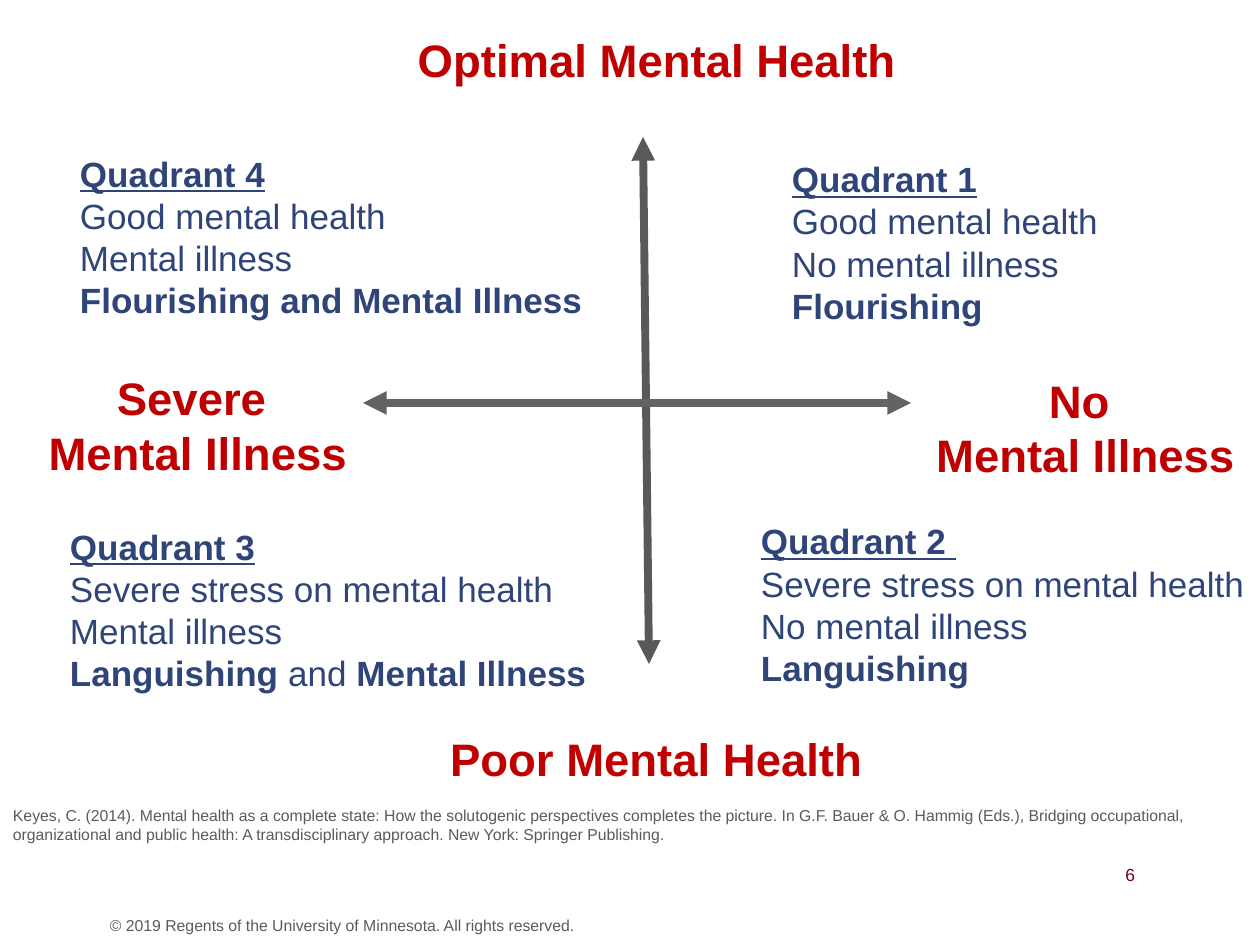
import pptx
import pptx.dml.color
import pptx.enum.shapes
import pptx.enum.text
import pptx.oxml.ns
import pptx.util
from lxml import etree

EMU_PER_PX = 914400 / 126
FONT = "Arial"
COLORS = {
    "axis_label": "C00000",
    "quadrant": "2F4478",
    "vertical_axis": "5A5858",
    "horizontal_axis": "646262",
    "note": "5C5A5A",
    "page_number": "7A0019",
}
ALIGN = pptx.enum.text.PP_ALIGN
WIDE_INSETS = (13, 6)
NARROW_INSETS = (9, 5)


def px(value):
    return pptx.util.Emu(round(value * EMU_PER_PX))


def rgb(name):
    return pptx.dml.color.RGBColor.from_string(COLORS[name])


def format_run(run, size, color, bold=False, underline=False):
    run.font.name = FONT
    run.font.size = pptx.util.Pt(size)
    run.font.color.rgb = rgb(color)
    run.font.bold = bold
    run.font.underline = underline


def add_text_frame(slide, box, insets=WIDE_INSETS):
    text_frame = slide.shapes.add_textbox(*map(px, box)).text_frame
    text_frame.word_wrap = True
    horizontal, vertical = map(px, insets)
    text_frame.margin_left = text_frame.margin_right = horizontal
    text_frame.margin_top = text_frame.margin_bottom = vertical
    return text_frame


def add_text(slide, box, text, size, color, align=ALIGN.LEFT, bold=False):
    text_frame = add_text_frame(slide, box)
    text_frame.text = text
    for paragraph in text_frame.paragraphs:
        paragraph.alignment = align
        for run in paragraph.runs:
            format_run(run, size, color, bold)


def add_axis_label(slide, box, text):
    add_text(slide, box, text, 26, "axis_label", ALIGN.CENTER, bold=True)


def add_quadrant(slide, box, heading, descriptions, outcome, insets=NARROW_INSETS):
    text_frame = add_text_frame(slide, box, insets)
    paragraph = text_frame.paragraphs[0]
    paragraph.text = heading
    format_run(paragraph.runs[0], 20, "quadrant", bold=True, underline=True)
    for description in descriptions:
        paragraph = text_frame.add_paragraph()
        paragraph.text = description
        format_run(paragraph.runs[0], 20, "quadrant")
    paragraph = text_frame.add_paragraph()
    for text, bold in outcome:
        run = paragraph.add_run()
        run.text = text
        format_run(run, 20, "quadrant", bold)


def add_axis(slide, start, end, color):
    axis = slide.shapes.add_connector(
        pptx.enum.shapes.MSO_CONNECTOR.STRAIGHT, *map(px, start + end)
    )
    axis.line.color.rgb = rgb(color)
    axis.line.width = pptx.util.Pt(4.5)
    line = axis.line._get_or_add_ln()
    for tag in ("a:headEnd", "a:tailEnd"):
        etree.SubElement(line, pptx.oxml.ns.qn(tag), type="triangle")
    etree.SubElement(axis._element.spPr, pptx.oxml.ns.qn("a:effectLst"))


def main():
    presentation = pptx.Presentation()
    presentation.slide_width = px(1260)
    presentation.slide_height = px(945)
    slide = presentation.slides.add_slide(presentation.slide_layouts[6])

    add_text(slide, (1014, 858, 134, 34), "6", 10, "page_number", ALIGN.RIGHT)
    add_text(
        slide, (97, 910, 1065, 32),
        "© 2019 Regents of the University of Minnesota. All rights reserved.",
        9, "note",
    )

    add_axis(slide, (643, 137), (649, 664), "vertical_axis")
    add_axis(slide, (363, 403), (911, 403), "horizontal_axis")

    add_axis_label(slide, (33, 364, 330, 123), "Severe \nMental Illness")
    add_axis_label(slide, (911, 367, 349, 123), "No \nMental Illness")
    add_axis_label(slide, (403, 26, 508, 68), "Optimal Mental Health")
    add_axis_label(slide, (422, 725, 469, 68), "Poor Mental Health")

    add_quadrant(
        slide, (779, 152, 403, 190), "Quadrant 1",
        ["Good mental health", "No mental illness"],
        [("Flourishing", True)], WIDE_INSETS,
    )
    add_quadrant(
        slide, (752, 515, 508, 239), "Quadrant 2 ",
        ["Severe stress on mental health", "No mental illness"],
        [("Languishing", True)],
    )
    add_quadrant(
        slide, (61, 520, 543, 214), "Quadrant 3",
        ["Severe stress on mental health", "Mental illness"],
        [("Languishing", True), (" and ", False), ("Mental Illness", True)],
    )
    add_quadrant(
        slide, (71, 147, 585, 198), "Quadrant 4",
        ["Good mental health", "Mental illness"],
        [("Flourishing and Mental Illness", True)],
    )

    add_text(
        slide, (0, 800, 1239, 50),
        "Keyes, C. (2014). Mental health as a complete state: How the solutogenic "
        "perspectives completes the picture. In G.F. Bauer & O. Hammig (Eds.), "
        "Bridging occupational, organizational and public health: A "
        "transdisciplinary approach. New York: Springer Publishing.",
        9, "note",
    )
    presentation.save("out.pptx")


if __name__ == "__main__":
    main()
